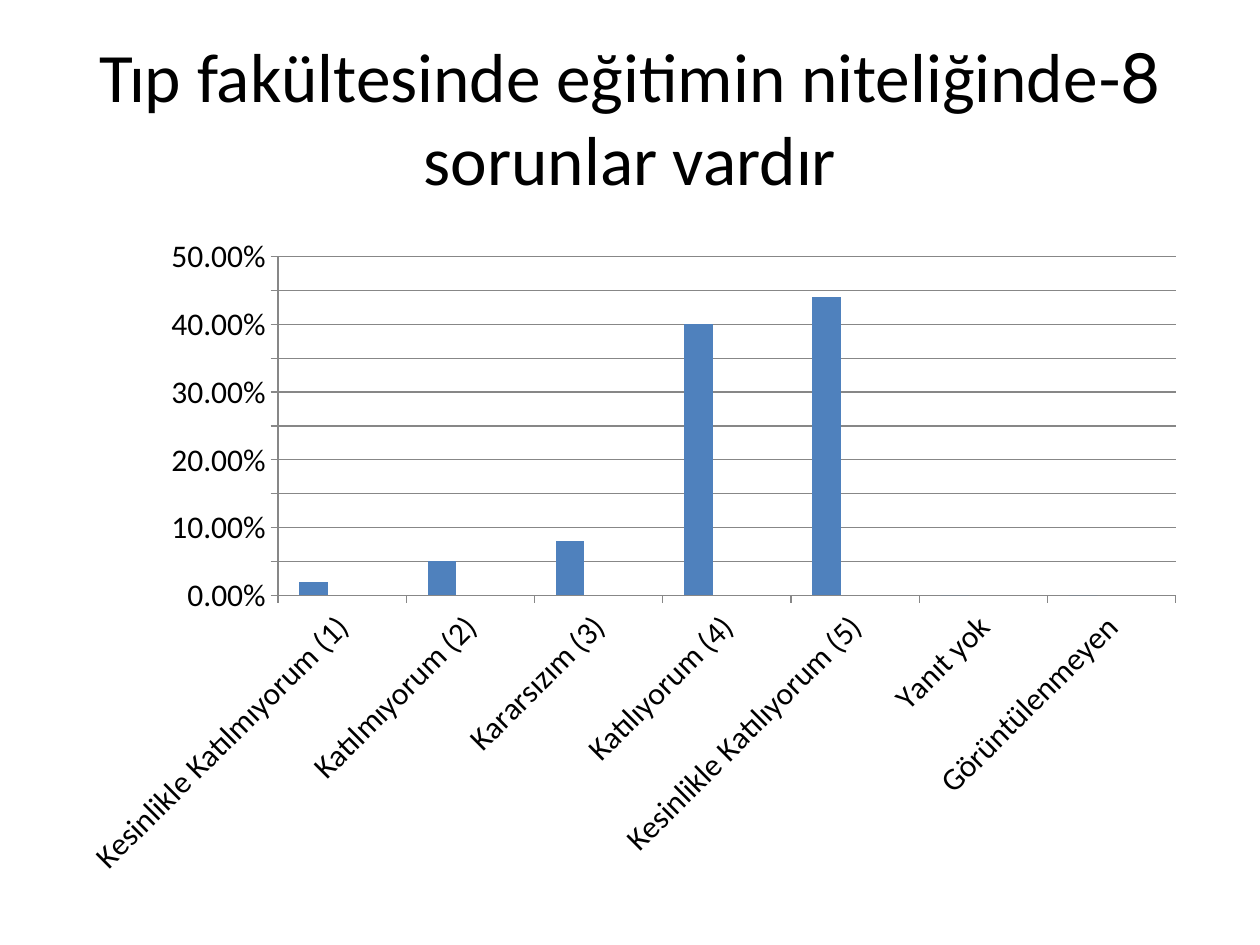
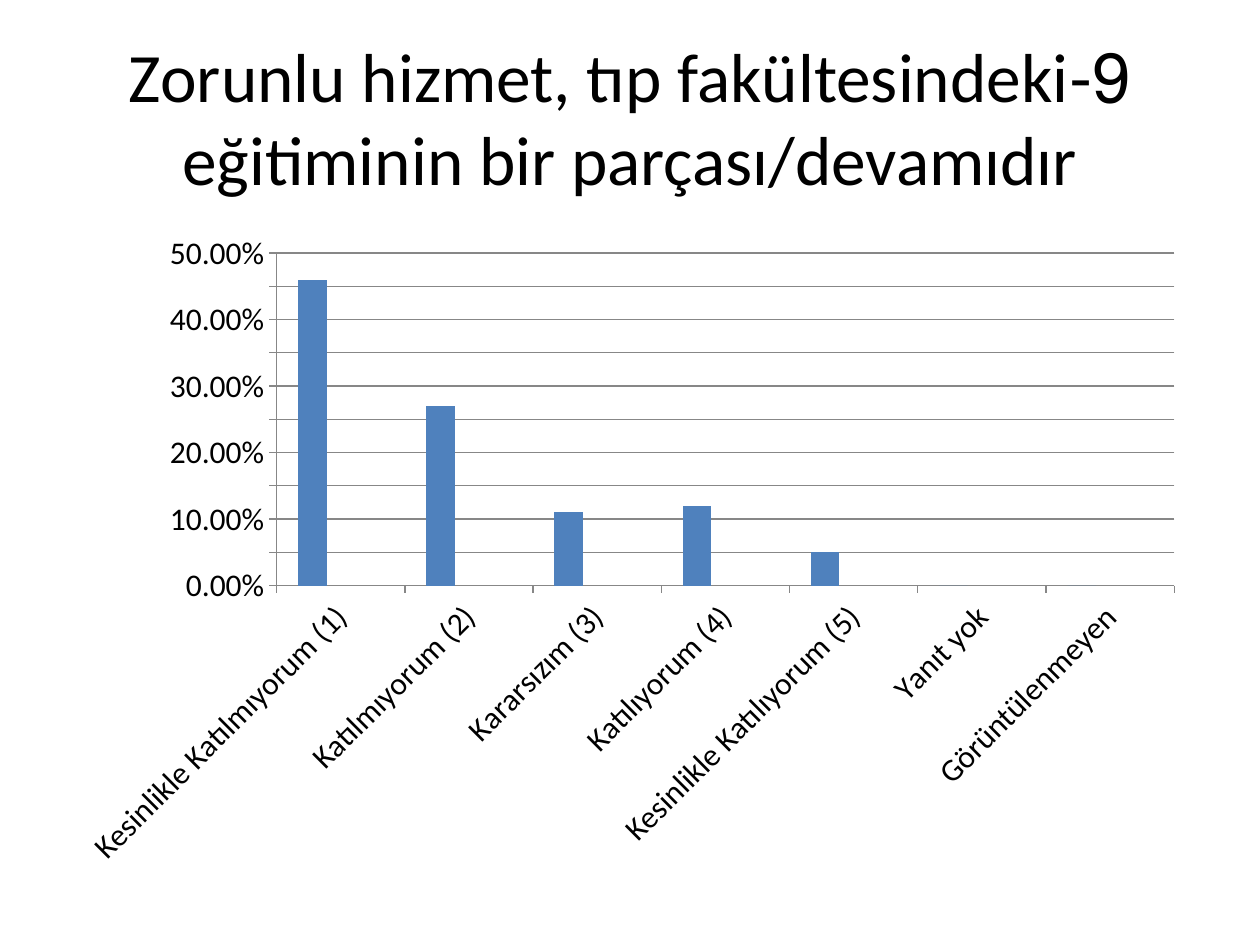
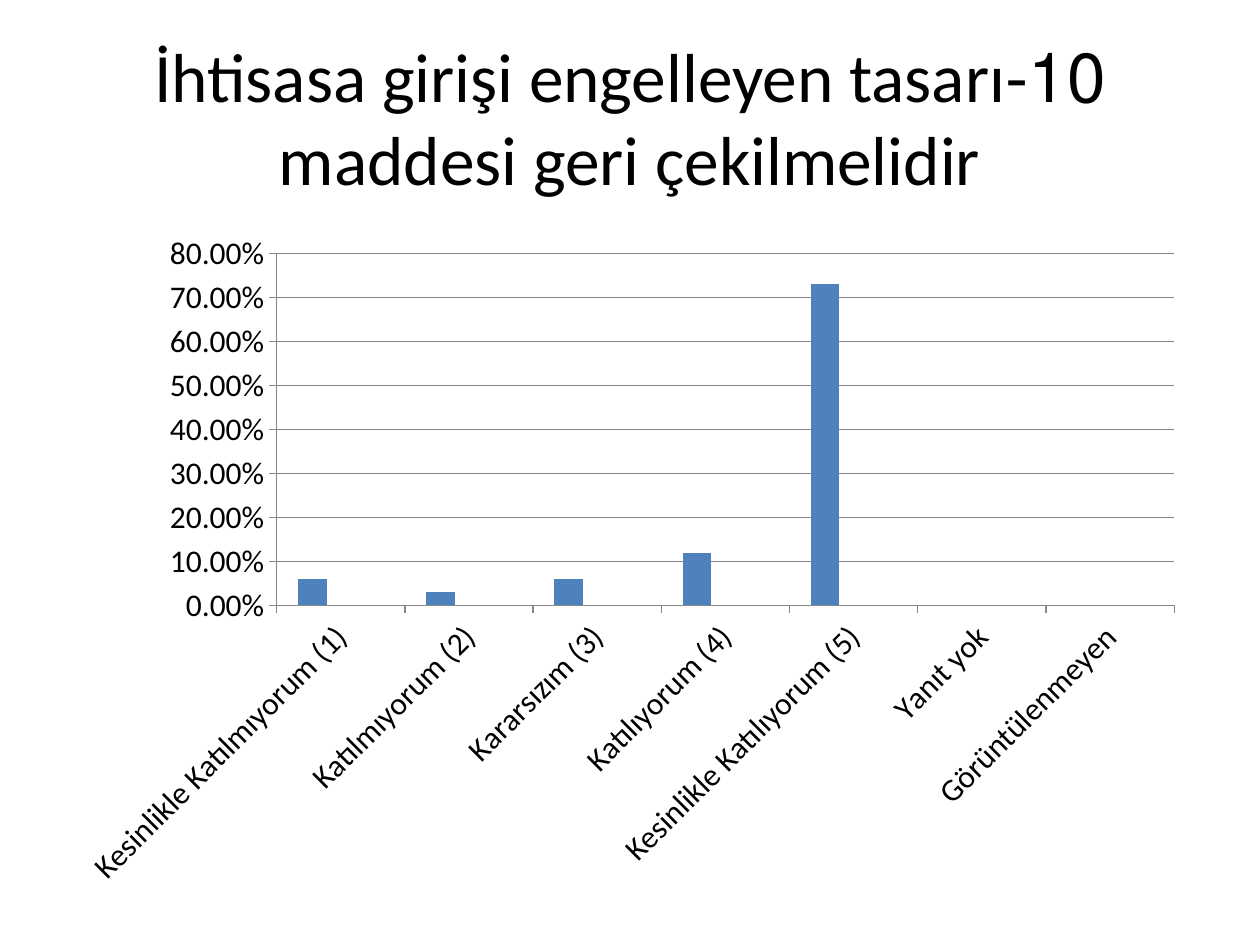
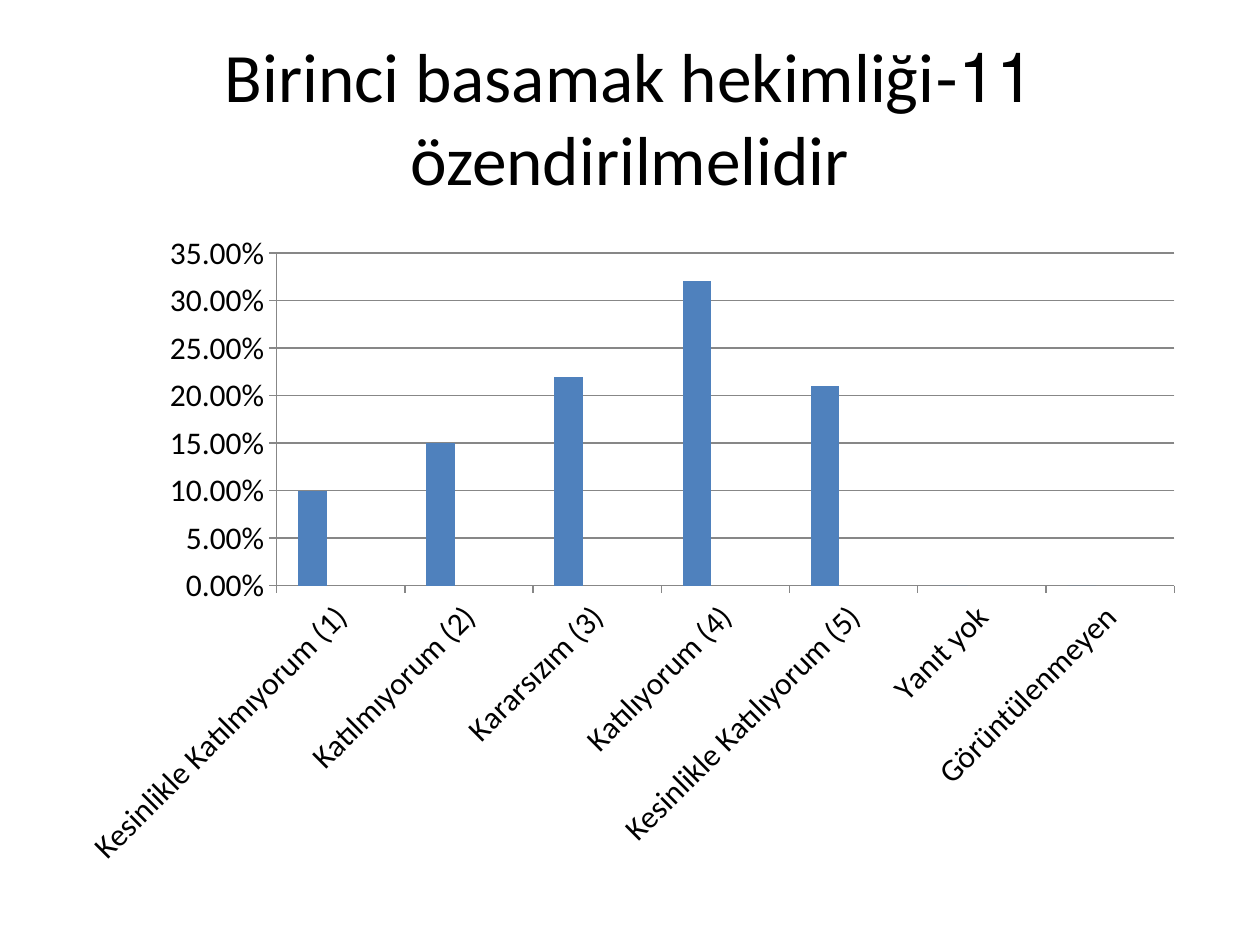
from pptx import Presentation
from pptx.chart.data import CategoryChartData
from pptx.dml.color import RGBColor
from pptx.enum.chart import XL_CHART_TYPE, XL_TICK_MARK
from pptx.enum.text import MSO_ANCHOR, PP_ALIGN
from pptx.util import Cm, Pt

FONT = "Calibri"
COLORS = {
    "background": "FFFFFF",
    "text": "000000",
    "axis": "878787",
    "Series 1": "4F81BD",
    "Series 2": "C0504D",
    "Series 3": "9BBB59",
}
SERIES_NAMES = ["Series 1", "Series 2", "Series 3"]
ANSWERS = [
    "Kesinlikle Katılmıyorum (1)",
    "Katılmıyorum (2)",
    "Kararsızım (3)",
    "Katılıyorum (4)",
    "Kesinlikle Katılıyorum (5)",
    "Yanıt yok",
    "Görüntülenmeyen",
]
TITLE_BOX = (Cm(1.27), Cm(0.76), Cm(22.86), Cm(3.18))

# Title, shares of the answers, axis maximum, axis step, chart box
QUESTIONS = [
    ("8-Tıp fakültesinde eğitimin niteliğinde sorunlar vardır",
     [0.02, 0.05, 0.08, 0.4, 0.44, 0, 0], 0.5, 0.05,
     (Cm(1.3), Cm(4.52), Cm(22.86), Cm(13.41))),
    ("9-Zorunlu hizmet, tıp fakültesindeki eğitiminin bir parçası/devamıdır",
     [0.46, 0.27, 0.11, 0.12, 0.05, 0, 0], 0.5, 0.05,
     (Cm(1.27), Cm(4.45), Cm(22.86), Cm(13.28))),
    ("10-İhtisasa girişi engelleyen tasarı maddesi geri çekilmelidir",
     [0.06, 0.03, 0.06, 0.12, 0.73, 0, 0], 0.8, 0.1,
     (Cm(1.27), Cm(4.45), Cm(22.86), Cm(13.69))),
    ("11-Birinci basamak hekimliği özendirilmelidir",
     [0.1, 0.15, 0.22, 0.32, 0.21, 0, 0], 0.35, 0.05,
     (Cm(1.27), Cm(4.45), Cm(22.86), Cm(13.28))),
]


def color(name):
    return RGBColor.from_string(COLORS[name])


def style_font(font, size):
    font.name = FONT
    font.size = Pt(size)
    font.color.rgb = color("text")


def style_line(line):
    line.color.rgb = color("axis")
    line.width = Pt(0.75)


def add_title(slide, text, box):
    """Add a centred title whose paragraph runs from right to left."""
    shape = slide.shapes.add_textbox(*box)
    frame = shape.text_frame
    frame.word_wrap = True
    frame.vertical_anchor = MSO_ANCHOR.MIDDLE
    paragraph = frame.paragraphs[0]
    paragraph.alignment = PP_ALIGN.CENTER
    shape.element.xpath(".//a:pPr")[0].set("rtl", "1")
    run = paragraph.add_run()
    run.text = text
    style_font(run.font, 39.6)


def add_answer_chart(slide, shares, maximum, step, box):
    """Add the column chart; only the first series holds values."""
    data = CategoryChartData(number_format="0.00%")
    data.categories = ANSWERS
    for name in SERIES_NAMES:
        data.add_series(name, shares if name == SERIES_NAMES[0] else [None] * len(ANSWERS))
    chart = slide.shapes.add_chart(XL_CHART_TYPE.COLUMN_CLUSTERED, *box, data).chart
    chart.has_title = False
    chart.has_legend = False
    style_font(chart.font, 18)

    plot = chart.plots[0]
    plot.gap_width = 150
    plot.vary_by_categories = False
    for series in plot.series:
        series.invert_if_negative = False
        series.format.fill.solid()
        series.format.fill.fore_color.rgb = color(series.name)

    for axis in (chart.category_axis, chart.value_axis):
        axis.major_tick_mark = XL_TICK_MARK.OUTSIDE
        style_line(axis.format.line)
        style_font(axis.tick_labels.font, 18)
    chart.element.xpath(".//c:catAx/c:txPr/a:bodyPr")[0].set("rot", "-2700000")

    value_axis = chart.value_axis
    value_axis.minimum_scale = 0
    value_axis.maximum_scale = maximum
    value_axis.major_unit = step
    value_axis.has_major_gridlines = True
    style_line(value_axis.major_gridlines.format.line)
    value_axis.tick_labels.number_format = "0.00%"
    value_axis.tick_labels.number_format_is_linked = False


def add_question_slide(presentation, title, shares, maximum, step, chart_box):
    slide = presentation.slides.add_slide(presentation.slide_layouts[6])
    slide.background.fill.solid()
    slide.background.fill.fore_color.rgb = color("background")
    add_title(slide, title, TITLE_BOX)
    add_answer_chart(slide, shares, maximum, step, chart_box)


def main():
    presentation = Presentation()
    presentation.slide_width = Cm(25.4)
    presentation.slide_height = Cm(19.05)
    for question in QUESTIONS:
        add_question_slide(presentation, *question)
    presentation.save("out.pptx")


if __name__ == "__main__":
    main()
